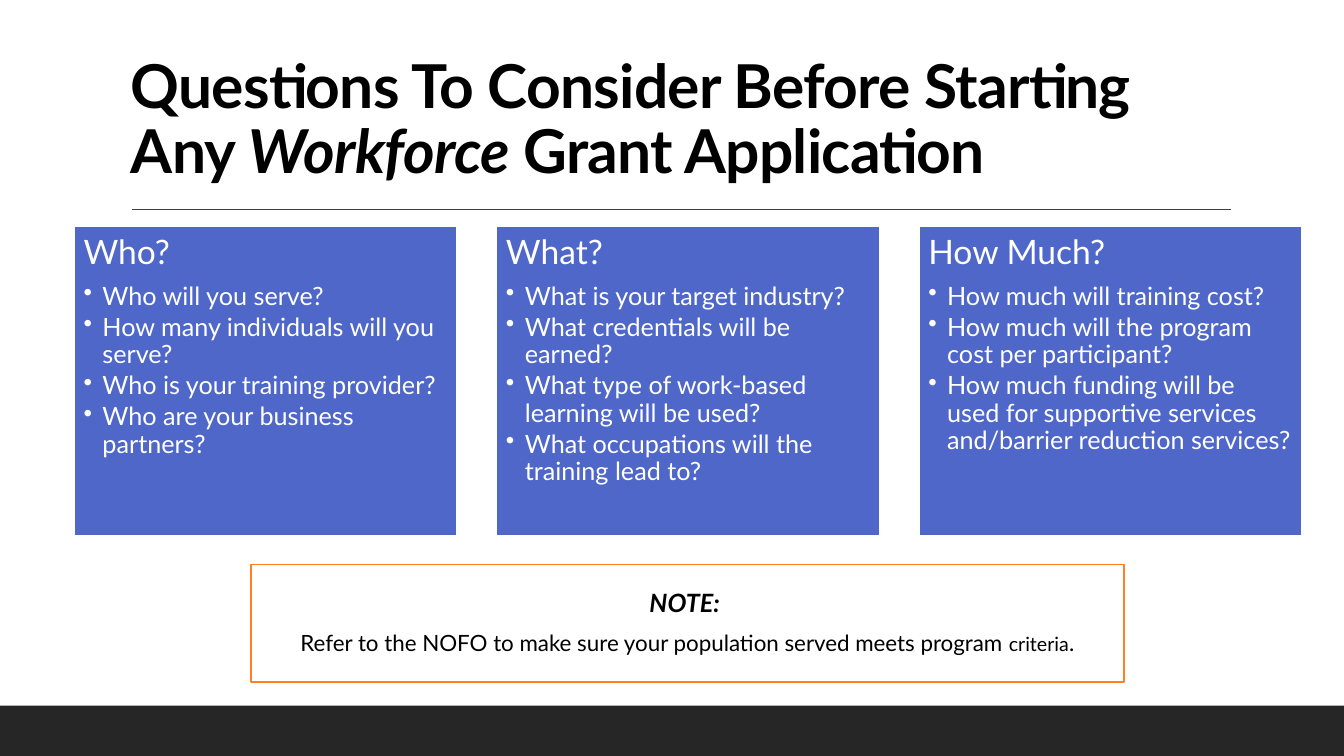
from lxml import etree
from pptx import Presentation
from pptx import util as u
from pptx.dml.color import RGBColor
from pptx.enum import shapes, text
from pptx.oxml.ns import qn

Pt = u.Pt
FONT = "Lato"
HUES = {
    "white": "FFFFFF",
    "black": "000000",
    "blue": "4E67C8",
    "orange": "FF8021",
    "rule": "404040",
    "foot": "262626",
}
CARDS = [
    ("Who?", [
        "Who will you serve?",
        "How many individuals will you serve?",
        "Who is your training provider?",
        "Who are your business partners?",
    ]),
    ("What?", [
        "What is your target industry?",
        "What credentials will be earned?",
        "What type of work-based learning will be used?",
        "What occupations will the training lead to?",
    ]),
    ("How Much?", [
        "How much will training cost?",
        "How much will the program cost per participant?",
        "How much funding will be used for supportive services "
        "and/barrier reduction services?",
    ]),
]


def hue(name):
    return RGBColor.from_string(HUES[name])


def add_box(slide, area, fill, line=None, width=1):
    box = slide.shapes.add_shape(
        shapes.MSO_SHAPE.RECTANGLE, *[Pt(n) for n in area])
    box.shadow.inherit = False
    box.fill.solid()
    box.fill.fore_color.rgb = hue(fill)
    if line:
        box.line.color.rgb = hue(line)
        box.line.width = Pt(width)
    else:
        box.line.fill.background()
    return box


def set_frame(shape, anchor, inset=None):
    frame = shape.text_frame
    frame.word_wrap = True
    frame.vertical_anchor = anchor
    if inset is not None:
        frame.margin_left = frame.margin_right = Pt(inset)
        frame.margin_top = frame.margin_bottom = Pt(inset)
    return frame


def add_para(frame, first=False, align=text.PP_ALIGN.LEFT, before=0, after=0):
    para = frame.paragraphs[0] if first else frame.add_paragraph()
    para.alignment = align
    para.line_spacing = 0.9
    para.space_before = Pt(before)
    para.space_after = Pt(after)
    return para


def add_run(para, words, size, color, bold=False, slant=False, track=None):
    run = para.add_run()
    run.text = words
    font = run.font
    font.name, font.size = FONT, Pt(size)
    font.bold, font.italic = bold, slant
    font.color.rgb = hue(color)
    if track is not None:
        run._r.get_or_add_rPr().set("spc", str(int(track * 100)))


def set_bullet(para, indent):
    props = para._p.get_or_add_pPr()
    props.set("marL", str(Pt(indent)))
    props.set("indent", str(-Pt(indent)))
    etree.SubElement(props, qn("a:buChar")).set("char", "•")


def add_rule(slide, left, right, top):
    rule = slide.shapes.add_connector(
        shapes.MSO_CONNECTOR.STRAIGHT, Pt(left), Pt(top), Pt(right), Pt(top))
    rule.line.color.rgb = hue("rule")
    rule.line.width = Pt(1)
    etree.SubElement(rule._element.spPr, qn("a:effectLst"))


def add_title(slide):
    box = slide.shapes.add_textbox(Pt(86.4), Pt(22.3), Pt(792), Pt(114.5))
    para = add_para(set_frame(box, text.MSO_ANCHOR.BOTTOM), first=True)
    for words, slant in (
        ("Questions To Consider Before Starting Any ", False),
        ("Workforce", True),
        (" Grant Application", False),
    ):
        add_run(para, words, 43.2, "black", True, slant, -0.5)


def add_card(slide, left, head, items):
    box = add_box(slide, (left, 161.3, 274.3, 221.8), "blue", "white", 2)
    frame = set_frame(box, text.MSO_ANCHOR.TOP, 7.2)
    add_run(add_para(frame, first=True, after=8.4), head, 24, "white")
    for item in items:
        para = add_para(frame, after=2.7)
        set_bullet(para, 13.5)
        add_run(para, item, 18, "white")


def add_note(slide):
    box = add_box(slide, (179.3, 403.2, 623.5, 84.2), "white", "orange", 1.25)
    frame = set_frame(box, text.MSO_ANCHOR.MIDDLE)
    mid = text.PP_ALIGN.CENTER
    head = add_para(frame, first=True, align=mid, before=10)
    add_run(head, "NOTE: ", 18, "black", True, True)
    body = add_para(frame, align=mid, before=10)
    for words, size in (
        ("Refer to the NOFO to make sure your population served "
         "meets program ", 16),
        ("criteria", 14),
        (".", 16),
    ):
        add_run(body, words, size, "black")


def main():
    deck = Presentation()
    deck.slide_width, deck.slide_height = Pt(960), Pt(540)
    slide = deck.slides.add_slide(deck.slide_layouts[6])

    # Footer band and title rule
    add_box(slide, (0, 504, 960, 36), "foot")
    add_rule(slide, 94.3, 879.1, 149.6)

    # Note and title
    add_note(slide)
    add_title(slide)

    # Question cards, evenly spaced
    for col, (head, items) in enumerate(CARDS):
        add_card(slide, 52.6 + col * 301.7, head, items)

    deck.save("out.pptx")


if __name__ == "__main__":
    main()
